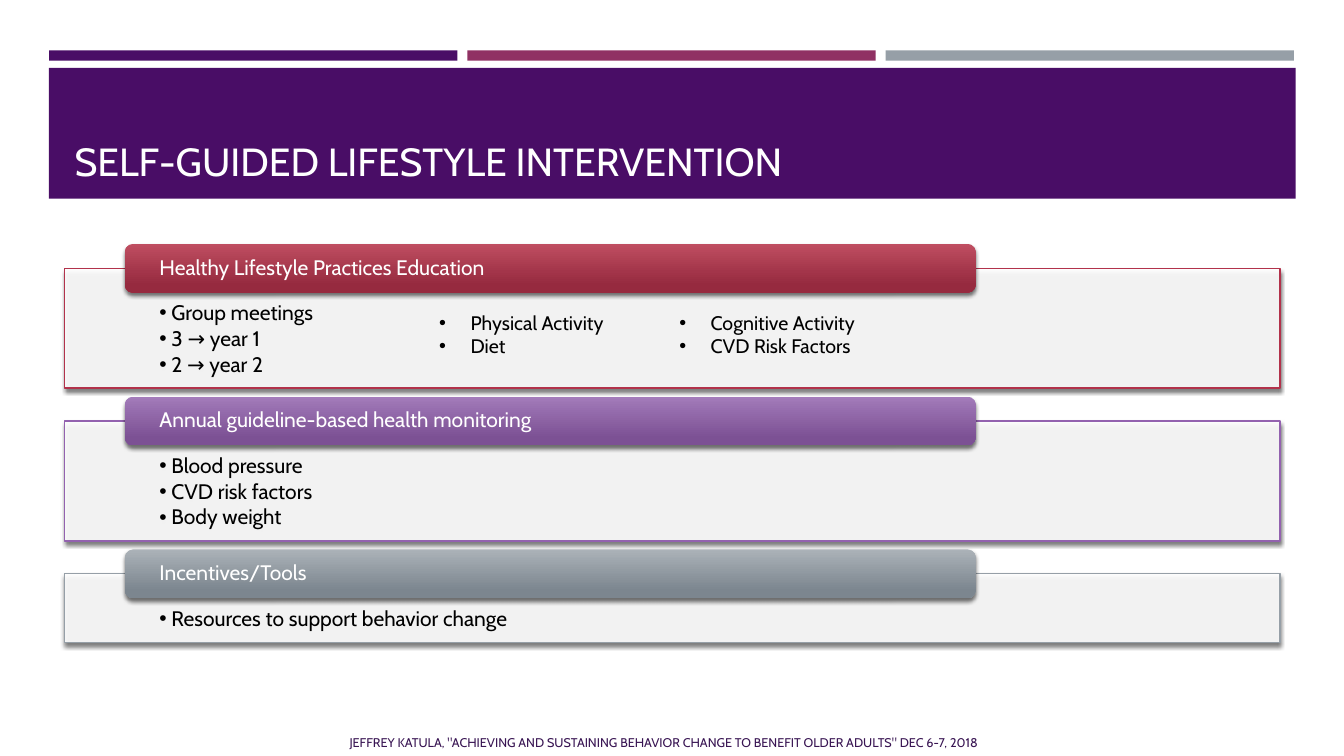
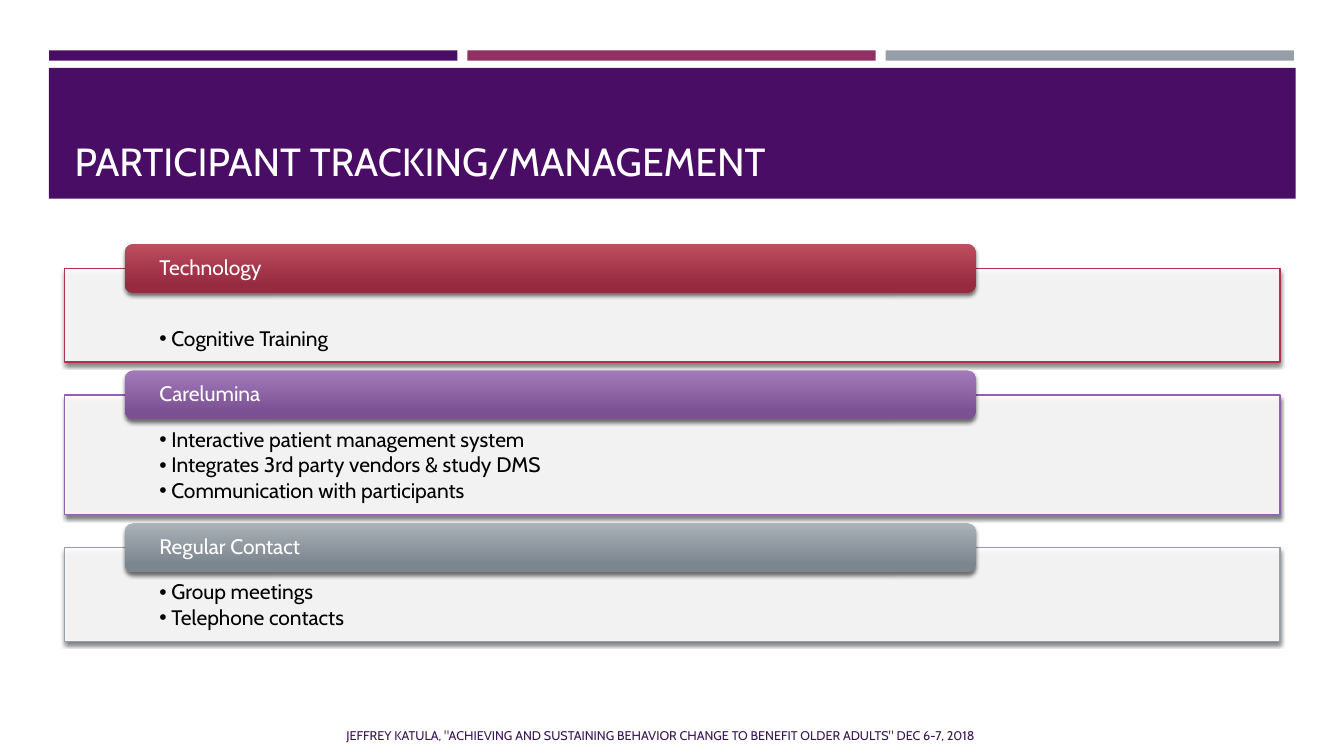
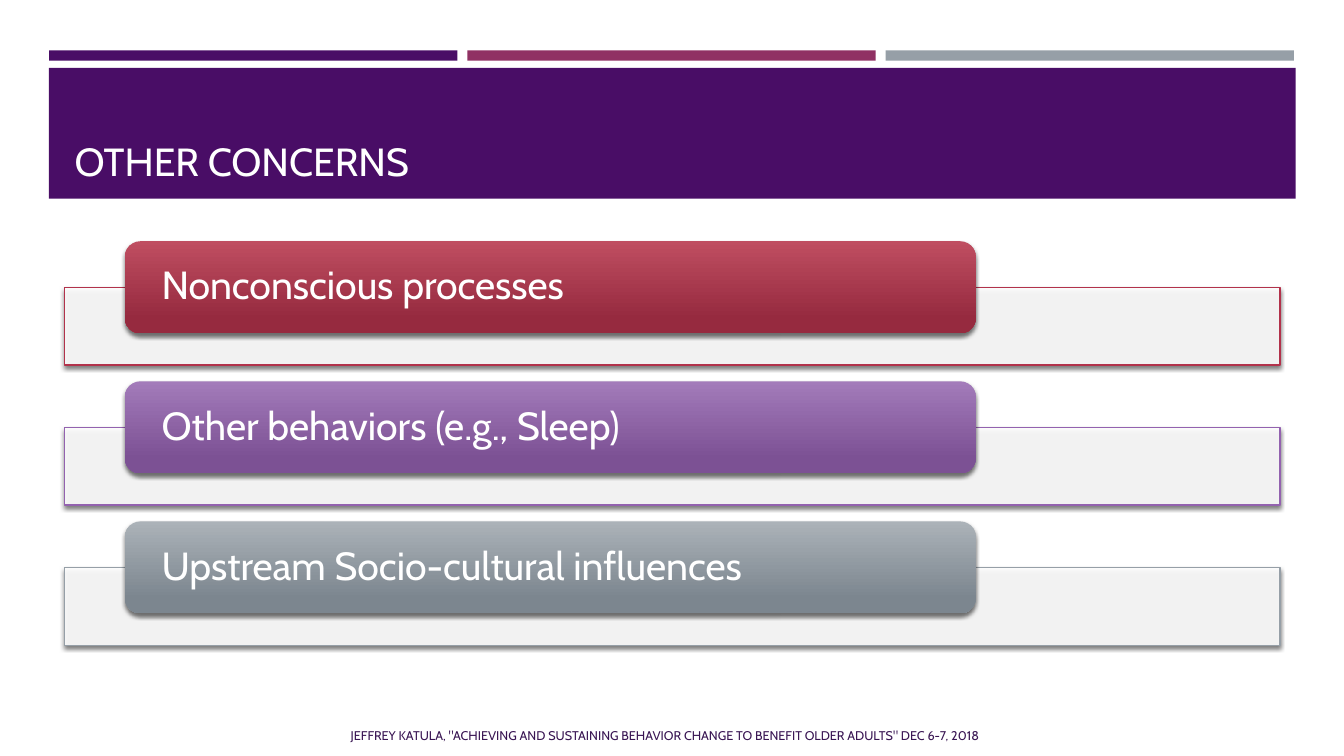
"""Build three lifestyle-intervention slides with titled panels."""
import lxml.etree
import pptx
import pptx.dml.color
import pptx.enum.shapes
import pptx.enum.text
import pptx.oxml.ns
import pptx.util

Cm = pptx.util.Cm
Pt = pptx.util.Pt
RGBColor = pptx.dml.color.RGBColor
SHAPE = pptx.enum.shapes.MSO_SHAPE
ANCHOR = pptx.enum.text.MSO_ANCHOR
qn = pptx.oxml.ns.qn

FONT = "Cabin"
WHITE = RGBColor(0xFF, 0xFF, 0xFF)
BLACK = RGBColor(0x00, 0x00, 0x00)
PURPLE = RGBColor(0x49, 0x0D, 0x66)
PLUM = RGBColor(0x90, 0x31, 0x63)
GRAY = RGBColor(0x96, 0x9F, 0xA7)
FOOTER_INK = RGBColor(0x39, 0x15, 0x53)
PANEL_STYLES = [
    (RGBColor(0xB2, 0x32, 0x4B), RGBColor(0xBF, 0x4E, 0x61), RGBColor(0x96, 0x2A, 0x3F)),
    (RGBColor(0x93, 0x62, 0xAF), RGBColor(0xA3, 0x7B, 0xBA), RGBColor(0x7C, 0x51, 0x94)),
    (GRAY, RGBColor(0xAB, 0xB2, 0xB8), RGBColor(0x7C, 0x86, 0x8F)),
]
FOOTER = ('JEFFREY KATULA, "ACHIEVING AND SUSTAINING BEHAVIOR CHANGE '
          'TO BENEFIT OLDER ADULTS" DEC 6-7, 2018')
PANEL_LEFT, PANEL_WIDTH = 1.63, 30.63
HEADER_LEFT, HEADER_WIDTH = 3.15, 21.44


def write_text(frame, text, size=15, color=BLACK, anchor=ANCHOR.TOP,
               insets=(0.25, 0.13, 0.25, 0.13), hanging=0, line_spacing=None, space_after=0):
    """Fill a text frame, one paragraph per line, with bullets when hanging is set."""
    frame.word_wrap = True
    frame.vertical_anchor = anchor
    frame.margin_left, frame.margin_top, frame.margin_right, frame.margin_bottom = map(Cm, insets)
    for index, line in enumerate(text.split("\n")):
        paragraph = frame.paragraphs[0] if index == 0 else frame.add_paragraph()
        paragraph.alignment = pptx.enum.text.PP_ALIGN.LEFT
        if hanging:
            properties = paragraph._p.get_or_add_pPr()
            properties.set("marL", str(Cm(hanging)))
            properties.set("indent", str(-Cm(hanging)))
            lxml.etree.SubElement(properties, qn("a:buFont")).set("typeface", "Arial")
            lxml.etree.SubElement(properties, qn("a:buChar")).set("char", "•")
        paragraph.line_spacing = line_spacing
        paragraph.space_after = Pt(space_after)
        run = paragraph.add_run()
        run.text = line
        run.font.name = FONT
        run.font.size = Pt(size)
        run.font.color.rgb = color


def add_text(slide, left, top, width, height, text, **text_format):
    """Add a text box with formatted text."""
    box = slide.shapes.add_textbox(Cm(left), Cm(top), Cm(width), Cm(height))
    write_text(box.text_frame, text, **text_format)
    return box


def add_block(slide, left, top, width, height, fill=None, kind=SHAPE.RECTANGLE):
    """Add a preset shape without line or shadow."""
    block = slide.shapes.add_shape(kind, Cm(left), Cm(top), Cm(width), Cm(height))
    block.shadow.inherit = False
    block.line.fill.background()
    if fill is not None:
        block.fill.solid()
        block.fill.fore_color.rgb = fill
    return block


def add_shadow(block):
    """Give a block a soft shadow below it."""
    effects = block._element.spPr.find(qn("a:effectLst"))
    shadow = lxml.etree.SubElement(effects, qn("a:outerShdw"), blurRad=str(Pt(3)),
                                   dist=str(Pt(2)), dir="5400000", rotWithShape="0")
    color = lxml.etree.SubElement(shadow, qn("a:srgbClr"), val=str(BLACK))
    lxml.etree.SubElement(color, qn("a:alpha"), val="55000")


def add_panel(slide, top, height, accent, body, body_top):
    """Add a translucent panel with an outline and optional bullets."""
    panel = add_block(slide, PANEL_LEFT, top, PANEL_WIDTH, height, fill=WHITE)
    fill_color = panel._element.spPr.find(qn("a:solidFill"))[0]
    lxml.etree.SubElement(fill_color, qn("a:alpha"), val="90000")
    panel.line.color.rgb = accent
    panel.line.width = Pt(1)
    add_shadow(panel)
    if body:
        write_text(panel.text_frame, body, insets=(2.39, body_top, 2.39, 0.3),
                   hanging=0.3, line_spacing=0.9, space_after=2.25)


def add_header(slide, top, height, light, dark, text, size):
    """Add a rounded gradient header."""
    header = add_block(slide, HEADER_LEFT, top, HEADER_WIDTH, height,
                       kind=SHAPE.ROUNDED_RECTANGLE)
    header.fill.gradient()
    header.fill.gradient_angle = 270
    for stop, color, position in zip(header.fill.gradient_stops, (light, dark), (0, 0.84)):
        stop.color.rgb = color
        stop.position = position
    add_shadow(header)
    write_text(header.text_frame, text, size=size, color=WHITE, anchor=ANCHOR.MIDDLE,
               insets=(0.81, 0, 0.81, 0), line_spacing=0.9)


def add_panel_list(slide, sections, top=6.76, gap=0.83, header_height=1.23, size=15):
    """Stack panels, each header centred on the top edge of its panel."""
    for (accent, light, dark), (heading, height, body, body_top) in zip(PANEL_STYLES, sections):
        add_panel(slide, top, height, accent, body, body_top)
        add_header(slide, top - header_height / 2, header_height, light, dark, heading, size)
        top += height + gap


def add_titled_slide(deck, title, footer_left, footer_top):
    """Add a blank slide with the shared bands, title and footer."""
    slide = deck.slides.add_slide(deck.slide_layouts[6])
    for column, color in enumerate((PURPLE, PLUM, GRAY)):
        add_block(slide, 1.24 + 10.54 * column, 1.27, 10.29, 0.26, fill=color)
    add_block(slide, 1.23, 1.71, 31.42, 3.3, fill=PURPLE)
    add_text(slide, 1.63, 1.96, 30.63, 2.82, title, size=28, color=WHITE, anchor=ANCHOR.BOTTOM)
    add_text(slide, footer_left, footer_top, 16.8, 1.02, FOOTER, size=9, color=FOOTER_INK,
             anchor=ANCHOR.MIDDLE)
    return slide


def main():
    """Build and save the deck."""
    deck = pptx.Presentation()
    deck.slide_width, deck.slide_height = Cm(33.87), Cm(19.05)

    intervention = add_titled_slide(deck, "SELF-GUIDED LIFESTYLE INTERVENTION", 8.56, 18.2)
    add_panel_list(intervention, [
        ("Healthy Lifestyle Practices Education", 3.02,
         "Group meetings\n3 → year 1\n2 → year 2", 0.86),
        ("Annual guideline-based health monitoring", 3.02,
         "Blood pressure\nCVD risk factors\nBody weight", 0.86),
        ("Incentives/Tools", 1.73, "Resources to support behavior change", 0.86),
    ])
    topics = add_text(intervention, 10.82, 7.7, 12.6, 1.83,
                      "Physical Activity\nDiet\nCognitive Activity\nCVD Risk Factors",
                      size=14, hanging=0.79)
    topics.text_frame._txBody.bodyPr.set("numCol", "2")

    tracking = add_titled_slide(deck, "PARTICIPANT TRACKING/MANAGEMENT", 8.48, 18.03)
    add_panel_list(tracking, [
        ("Technology", 2.36, "Cognitive Training", 1.52),
        ("Carelumina", 3.02,
         "Interactive patient management system\nIntegrates 3rd party vendors & study DMS\n"
         "Communication with participants", 0.86),
        ("Regular Contact", 2.36, "Group meetings\nTelephone contacts", 0.86),
    ])

    concerns = add_titled_slide(deck, "OTHER CONCERNS", 8.59, 18.03)
    headings = ("Nonconscious processes", "Other behaviors (e.g., Sleep)",
                "Upstream Socio-cultural influences")
    add_panel_list(concerns, [(heading, 1.96, "", 0) for heading in headings],
                   top=7.24, gap=1.57, header_height=2.32, size=28)

    deck.save("out.pptx")


if __name__ == "__main__":
    main()
